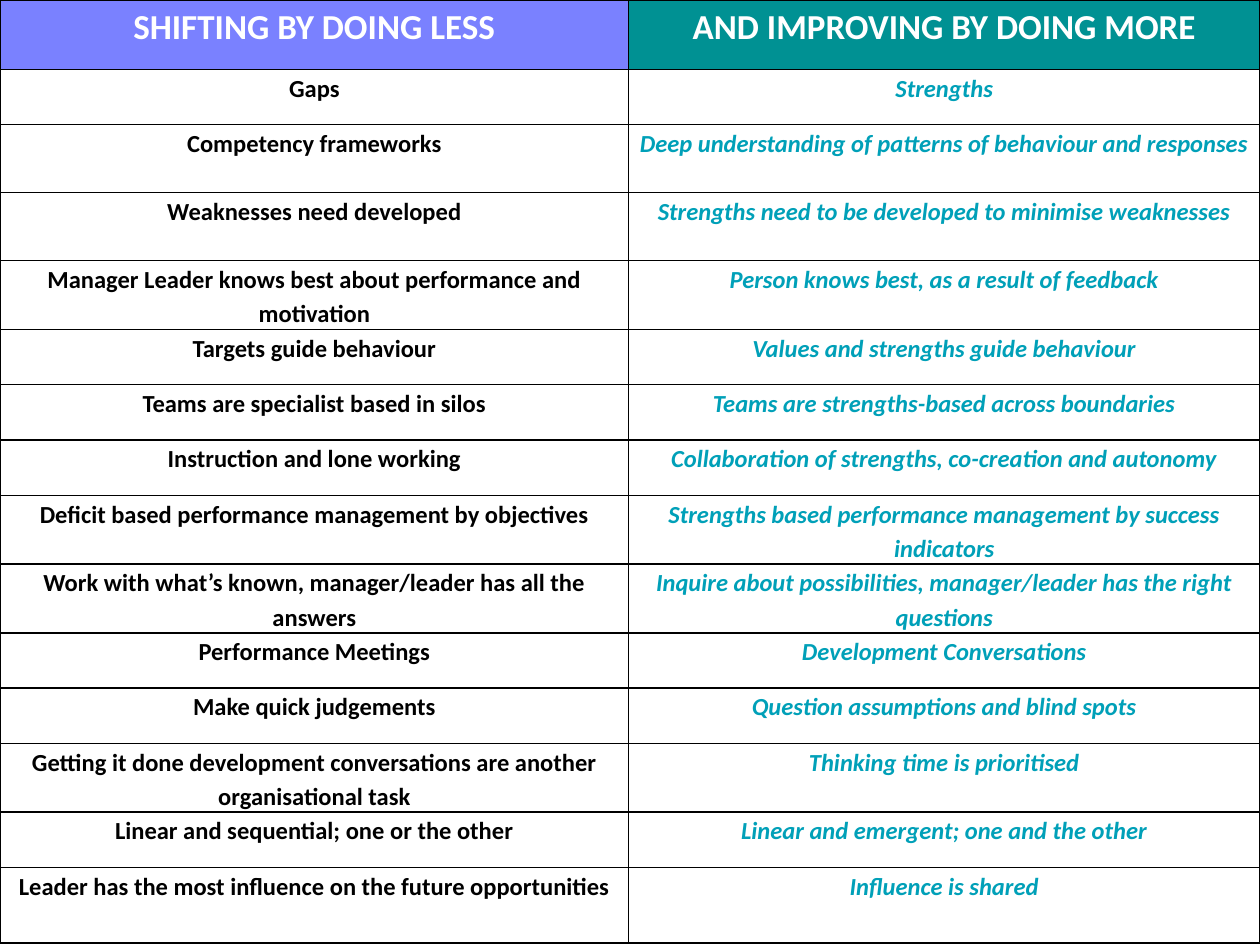
import pptx
import pptx.dml.color
import pptx.enum.text
import pptx.oxml.ns
import pptx.util
from lxml import etree

Inches = pptx.util.Inches
RGBColor = pptx.dml.color.RGBColor

WHITE = RGBColor(0xFF, 0xFF, 0xFF)
BLACK = RGBColor(0x00, 0x00, 0x00)
VIOLET = RGBColor(0x7A, 0x81, 0xFF)
TEAL = RGBColor(0x00, 0x91, 0x93)
CYAN = RGBColor(0x00, 0xA0, 0xB8)

HEADER_FILLS = (VIOLET, TEAL)
BODY_COLORS = (BLACK, CYAN)
COL_WIDTHS = (4.99, 5.01)

# Row height, "less" text, "more" text
ROWS = [
    (0.55, "SHIFTING BY DOING LESS", "AND IMPROVING BY DOING MORE"),
    (0.44, "Gaps", "Strengths"),
    (0.54, "Competency frameworks",
     "Deep understanding of patterns of behaviour and responses"),
    (0.54, "Weaknesses need developed",
     "Strengths need to be developed to minimise weaknesses"),
    (0.54, "Manager Leader knows best about performance and motivation",
     "Person knows best, as a result of feedback"),
    (0.44, "Targets guide behaviour", "Values and strengths guide behaviour"),
    (0.44, "Teams are specialist based in silos",
     "Teams are strengths-based across boundaries"),
    (0.44, "Instruction and lone working",
     "Collaboration of strengths, co-creation and autonomy"),
    (0.54, "Deficit based performance management by objectives",
     "Strengths based performance management by success indicators"),
    (0.54, "Work with what’s known, manager/leader has all the answers",
     "Inquire about possibilities, manager/leader has the right questions"),
    (0.44, "Performance Meetings", "Development Conversations"),
    (0.44, "Make quick judgements", "Question assumptions and blind spots"),
    (0.54, "Getting it done development conversations are another organisational task",
     "Thinking time is prioritised"),
    (0.44, "Linear and sequential; one or the other",
     "Linear and emergent; one and the other"),
    (0.6, "Leader has the most influence on the future opportunities",
     "Influence is shared"),
]


def add_borders(cell, color, width):
    tc_pr = cell._tc.get_or_add_tcPr()
    qn = pptx.oxml.ns.qn
    for side in ("a:lnL", "a:lnR", "a:lnT", "a:lnB"):
        ln = etree.SubElement(tc_pr, qn(side), w=str(width))
        fill = etree.SubElement(ln, qn("a:solidFill"))
        etree.SubElement(fill, qn("a:srgbClr"), val=str(color))


prs = pptx.Presentation()
prs.slide_width = Inches(10)
prs.slide_height = Inches(7.5)
s = prs.slides.add_slide(prs.slide_layouts[6])

# Comparison table filling the slide
table = s.shapes.add_table(len(ROWS), len(COL_WIDTHS), 0, 0,
                           Inches(10), Inches(7.5)).table
table.horz_banding = False
for column, width in zip(table.columns, COL_WIDTHS):
    column.width = Inches(width)

for i, (height, *texts) in enumerate(ROWS):
    table.rows[i].height = Inches(height)
    header = i == 0
    for j, text in enumerate(texts):
        # Cell frame: borders come before the fill in the cell properties
        cell = table.cell(i, j)
        add_borders(cell, BLACK, pptx.util.Pt(1))
        cell.fill.solid()
        cell.fill.fore_color.rgb = HEADER_FILLS[j] if header else WHITE
        cell.margin_left = cell.margin_right = Inches(0.05)
        cell.margin_top = cell.margin_bottom = 0

        # Cell text
        p = cell.text_frame.paragraphs[0]
        p.alignment = pptx.enum.text.PP_ALIGN.CENTER
        p.line_spacing = 1.15
        r = p.add_run()
        r.text = text
        r.font.name = "Calibri"
        r.font.size = pptx.util.Pt(20 if header else 14)
        r.font.bold = True
        r.font.italic = not header and j == 1
        r.font.color.rgb = WHITE if header else BODY_COLORS[j]

prs.save("out.pptx")
